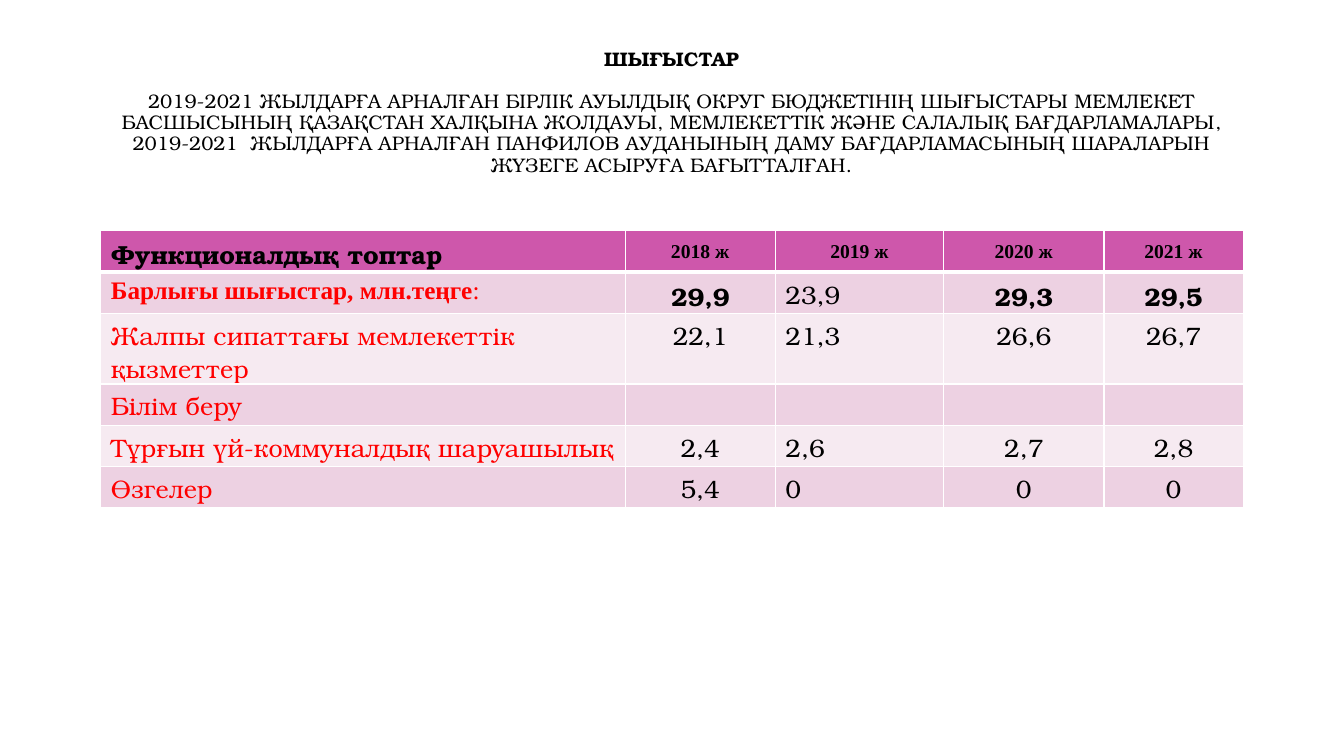
from pptx import Presentation
from pptx.dml.color import RGBColor
from pptx.enum.text import MSO_ANCHOR as Anchor, PP_ALIGN as Align
from pptx.oxml import parse_xml
from pptx.oxml.ns import nsdecls
from pptx.util import Inches, Pt

BLACK = RGBColor(0, 0, 0)
RED = RGBColor(0xFF, 0, 0)
PINK = RGBColor(0xCE, 0x57, 0xAB)
ROSE = RGBColor(0xED, 0xD1, 0xE2)
PALE = RGBColor(0xF6, 0xEA, 0xF1)
BONUM = "TeX Gyre Bonum"
TIMES = "Times New Roman"


def write(para, text, size=18, font=BONUM, color=BLACK, bold=False, align=Align.LEFT):
    para.alignment = align
    run = para.add_run()
    run.text = text
    run.font.size = Pt(size)
    run.font.name = font
    run.font.bold = bold
    run.font.color.rgb = color


def edge(cell, side, width):
    cell._tc.get_or_add_tcPr().append(parse_xml(
        f'<a:ln{side} {nsdecls("a")} w="{Pt(width)}"><a:solidFill>'
        f'<a:srgbClr val="FFFFFF"/></a:solidFill></a:ln{side}>'))


deck = Presentation()
deck.slide_width = Inches(13.33)
deck.slide_height = Inches(7.5)
slide = deck.slides.add_slide(deck.slide_layouts[6])

box = slide.shapes.add_textbox(Inches(1), Inches(0.39), Inches(11.32), Inches(1.73))
frame = box.text_frame
frame.word_wrap = True
frame.margin_top = Inches(0.1)
head = frame.paragraphs[0]
head.space_after = Pt(15)
write(head, "ШЫҒЫСТАР", size=14, bold=True, align=Align.CENTER)
body = frame.add_paragraph()
write(body, "2019-2021 ЖЫЛДАРҒА АРНАЛҒАН БІРЛІК АУЫЛДЫҚ ОКРУГ БЮДЖЕТІНІҢ ШЫҒЫСТАРЫ "
      "МЕМЛЕКЕТ БАСШЫСЫНЫҢ ҚАЗАҚСТАН ХАЛҚЫНА ЖОЛДАУЫ, МЕМЛЕКЕТТІК ЖӘНЕ САЛАЛЫҚ "
      "БАҒДАРЛАМАЛАРЫ, 2019-2021  ЖЫЛДАРҒА АРНАЛҒАН ПАНФИЛОВ АУДАНЫНЫҢ ДАМУ "
      "БАҒДАРЛАМАСЫНЫҢ ШАРАЛАРЫН ЖҮЗЕГЕ АСЫРУҒА БАҒЫТТАЛҒАН.",
      size=14, align=Align.CENTER)
for para in frame.paragraphs:
    para.line_spacing = 0.9

rows = [
    ["Функционалдық топтар", "2018 ж", "2019 ж", "2020 ж", "2021 ж"],
    ["Барлығы шығыстар, млн.теңге", "29,9", "23,9", "29,3", "29,5"],
    ["Жалпы сипаттағы мемлекеттік қызметтер", "22,1", "21,3", "26,6", "26,7"],
    ["Білім беру", "", "", "", ""],
    ["Тұрғын үй-коммуналдық шаруашылық", "2,4", "2,6", "2,7", "2,8"],
    ["Өзгелер", "5,4", "0", "0", "0"],
]
widths = [5.2, 1.49, 1.67, 1.59, 1.38]
highs = [0.41, 0.41, 0.62, 0.41, 0.41, 0.41]
table = slide.shapes.add_table(len(rows), len(widths), Inches(1), Inches(2.29),
                               Inches(11.32), Inches(2.65)).table
for col, width in zip(table.columns, widths):
    col.width = Inches(width)
for row, high in zip(table.rows, highs):
    row.height = Inches(high)

for r, row in enumerate(rows):
    for c, text in enumerate(row):
        cell = table.cell(r, c)
        edge(cell, "L", 1)
        edge(cell, "R", 1)
        edge(cell, "T", 3 if r == 1 else 1)
        edge(cell, "B", 3 if r == 0 else 1)
        cell.fill.solid()
        cell.fill.fore_color.rgb = PINK if r == 0 else ROSE if r % 2 else PALE
        para = cell.text_frame.paragraphs[0]
        if r == 0 and c > 0:
            cell.vertical_anchor = Anchor.MIDDLE
            cell.margin_left = cell.margin_right = Inches(0.07)
            cell.margin_top = cell.margin_bottom = 0
            write(para, text, size=14, font=TIMES, bold=True, align=Align.CENTER)
        elif r == 1 and c == 0:
            write(para, text, font=TIMES, color=RED, bold=True)
            write(para, ":", font=TIMES, color=RED)
        elif text:
            write(para, text, color=RED if r and c == 0 else BLACK,
                  bold=r == 0 or (r == 1 and c != 2),
                  align=Align.LEFT if c in (0, 2) else Align.CENTER)

deck.save("out.pptx")
